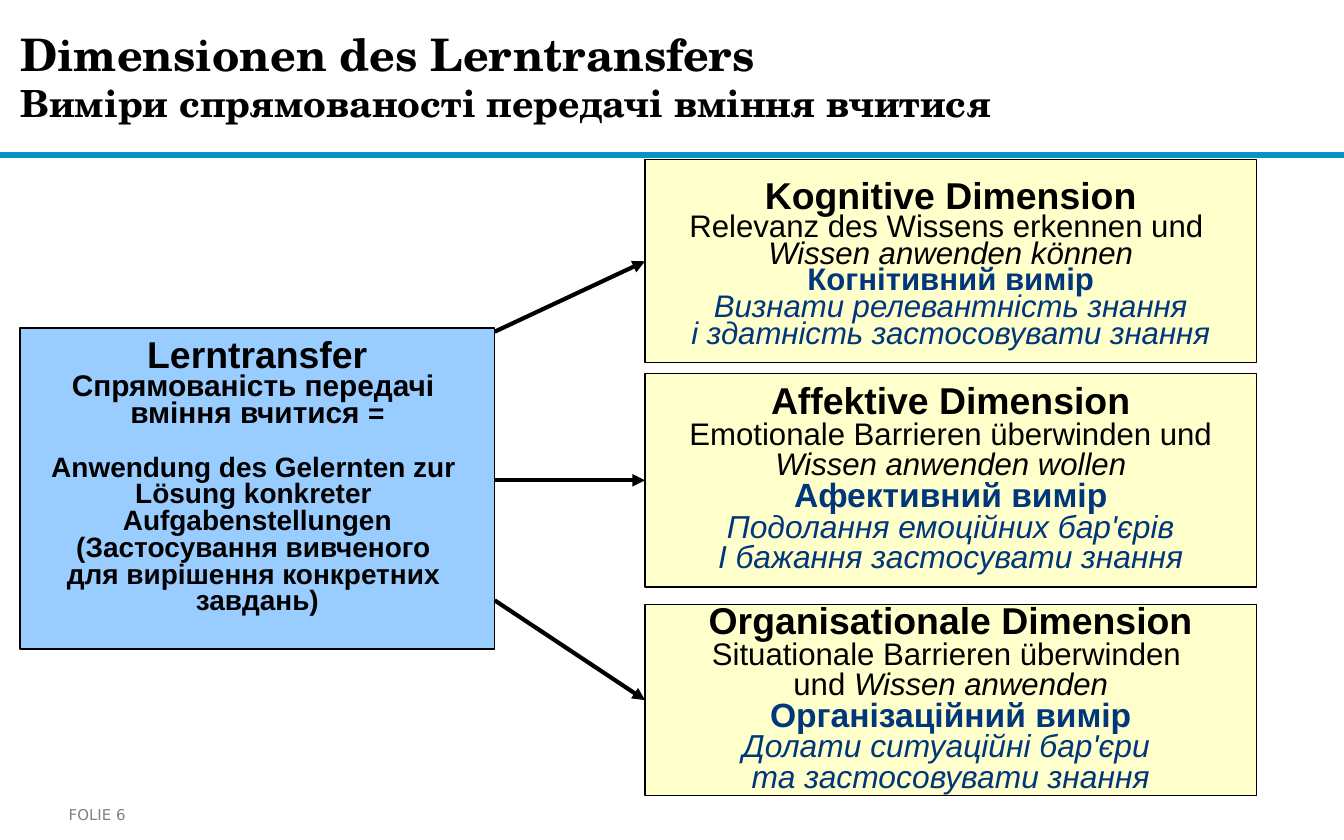
from lxml import etree
from pptx import Presentation
from pptx.dml.color import RGBColor
from pptx.enum.shapes import MSO_CONNECTOR, MSO_SHAPE
from pptx.enum.text import MSO_ANCHOR, PP_ALIGN
from pptx.oxml.ns import qn
from pptx.util import Cm, Pt

RECTANGLE = MSO_SHAPE.RECTANGLE
STRAIGHT = MSO_CONNECTOR.STRAIGHT
MIDDLE = MSO_ANCHOR.MIDDLE
CENTER = PP_ALIGN.CENTER
LEFT_SIDE = 1

BLACK = "000000"
NAVY = "00367B"
HEADING_SIZE = 20
GERMAN_SIZE = 16.7
TIGHT_LINE = 8.3
TIGHT_GAP = 6
HANGING = Cm(0.48)

DIMENSIONS = [
    {
        "top": 3.02, "height": 3.84, "tight": True,
        "heading": "Kognitive Dimension",
        "german": [[("Relevanz des Wissens erkennen und ", False)],
                   [("Wissen anwenden können", True)]],
        "subheading": "Когнітивний вимір",
        "ukrainian": ["Визнати релевантність знання",
                      "і здатність застосовувати знання"],
        "ukrainian_sizes": (16.7, 16.7),
    },
    {
        "top": 7.06, "height": 4.04, "tight": False,
        "heading": "Affektive Dimension",
        "german": [[("Emotionale Barrieren überwinden und", False)],
                   [("Wissen anwenden wollen", True)]],
        "subheading": "Афективний вимір",
        "ukrainian": ["Подолання емоційних бар'єрів",
                      "І бажання застосувати знання"],
        "ukrainian_sizes": (18, 17),
    },
    {
        "top": 11.43, "height": 3.61, "tight": False,
        "heading": "Organisationale Dimension",
        "german": [[("Situationale Barrieren überwinden ", False)],
                   [("und ", False), ("Wissen anwenden", True)]],
        "subheading": "Організаційний вимір",
        "ukrainian": ["Долати ситуаційні бар'єри ",
                      "та застосовувати знання"],
        "ukrainian_sizes": (18, 17),
    },
]


def color(value):
    return RGBColor.from_string(value)


def lengths(box):
    return [Cm(value) for value in box]


def format_run(run, size, font="Arial", hue=BLACK, bold=False, italic=False):
    run.font.size = Pt(size)
    run.font.name = font
    run.font.bold = bold
    run.font.italic = italic
    run.font.color.rgb = color(hue)


def add_box(slide, box, fill, line, line_width):
    shape = slide.shapes.add_shape(RECTANGLE, *lengths(box))
    shape.shadow.inherit = False
    shape.fill.solid()
    shape.fill.fore_color.rgb = color(fill)
    shape.line.color.rgb = color(line)
    shape.line.width = Pt(line_width)
    shape.text_frame.word_wrap = False
    shape.text_frame.vertical_anchor = MIDDLE
    return shape


def add_centered_lines(text_frame, lines):
    for index, runs in enumerate(lines):
        paragraph = text_frame.paragraphs[0] if index == 0 else text_frame.add_paragraph()
        paragraph.alignment = CENTER
        properties = paragraph._p.get_or_add_pPr()
        properties.set("marL", str(HANGING))
        properties.set("indent", str(-HANGING))
        for text, style in runs:
            run = paragraph.add_run()
            run.text = text
            format_run(run, **style)
    return text_frame.paragraphs


def tighten(paragraph):
    paragraph.line_spacing = Pt(TIGHT_LINE)
    paragraph.space_after = Pt(TIGHT_GAP)


def add_header(slide, box, rule_box):
    add_box(slide, rule_box, "0C94B7", "0096D3", 1)
    text_frame = slide.shapes.add_textbox(*lengths(box)).text_frame
    text_frame.word_wrap = True
    text_frame.vertical_anchor = MIDDLE
    text_frame.margin_left = text_frame.margin_right = 0
    text_frame.margin_top = text_frame.margin_bottom = 0
    text_frame.text = ("Dimensionen des Lerntransfers\n"
                       "Виміри спрямованості передачі вміння вчитися")
    for paragraph, size in zip(text_frame.paragraphs, (24, 20)):
        format_run(paragraph.runs[0], size, "TeX Gyre Schola", bold=True)


def add_transfer(slide, box):
    shape = add_box(slide, box, "99CCFF", BLACK, 0.75)
    heading = {"size": HEADING_SIZE, "bold": True}
    subheading = {"size": 16, "bold": True}
    body = {"size": 15, "bold": True}
    definition = ["Anwendung des Gelernten zur ", "Lösung konkreter ",
                  "Aufgabenstellungen", "(Застосування вивченого ",
                  "для вирішення конкретних ", "завдань)"]
    lines = [
        [("Lerntransfer", heading)],
        [("Спрямованість передачі ", subheading)],
        [("вміння вчитися ", subheading), ("=", body)],
    ] + [[(text, body)] for text in definition]
    paragraphs = add_centered_lines(shape.text_frame, lines)
    for paragraph in paragraphs:
        tighten(paragraph)
    paragraphs[2].space_after = Pt(TIGHT_LINE + 2 * TIGHT_GAP)


def add_dimension(slide, box, dimension):
    shape = add_box(slide, box, "FFFFCC", BLACK, 0.75)
    subheading_size, ukrainian_size = dimension["ukrainian_sizes"]
    lines = [[(dimension["heading"], {"size": HEADING_SIZE, "bold": True})]]
    for parts in dimension["german"]:
        lines.append([(text, {"size": GERMAN_SIZE, "italic": italic})
                      for text, italic in parts])
    lines.append([(dimension["subheading"],
                   {"size": subheading_size, "hue": NAVY, "bold": True})])
    for text in dimension["ukrainian"]:
        lines.append([(text, {"size": ukrainian_size, "hue": NAVY, "italic": True})])
    paragraphs = add_centered_lines(shape.text_frame, lines)
    for paragraph in paragraphs:
        if dimension["tight"]:
            tighten(paragraph)
        else:
            paragraph.line_spacing = 0.8
    if dimension["tight"]:
        paragraphs[0].line_spacing = 1.0
    return shape


def add_arrow(slide, left, top, target):
    arrow = slide.shapes.add_connector(STRAIGHT, Cm(left), Cm(top), target.left, Cm(top))
    arrow.end_connect(target, LEFT_SIDE)
    arrow.line.color.rgb = color(BLACK)
    arrow.line.width = Pt(2.25)
    etree.SubElement(arrow.line._get_or_add_ln(), qn("a:tailEnd"), type="triangle")
    etree.SubElement(arrow._element.spPr, qn("a:effectLst"))


def add_footer(slide, box):
    text_frame = slide.shapes.add_textbox(*lengths(box)).text_frame
    text_frame.word_wrap = True
    text_frame.vertical_anchor = MIDDLE
    text_frame.margin_left = text_frame.margin_right = 0
    text_frame.text = "FOLIE 6"
    format_run(text_frame.paragraphs[0].runs[0], 8, "DejaVu Sans", "808080")


def main():
    presentation = Presentation()
    presentation.slide_width = Cm(25.4)
    presentation.slide_height = Cm(15.88)
    slide = presentation.slides.add_slide(presentation.slide_layouts[6])

    add_header(slide, (0.38, 0.18, 19, 2.51), (0, 2.9, 25.4, 0.08))
    add_transfer(slide, (0.38, 6.2, 8.97, 6.07))
    for dimension, arrow_top in zip(DIMENSIONS, (6.27, 9.08, 11.35)):
        box = (12.19, dimension["top"], 11.56, dimension["height"])
        target = add_dimension(slide, box, dimension)
        add_arrow(slide, 9.35, arrow_top, target)
    add_footer(slide, (1.3, 15.04, 2.49, 0.71))

    presentation.save("out.pptx")


if __name__ == "__main__":
    main()
